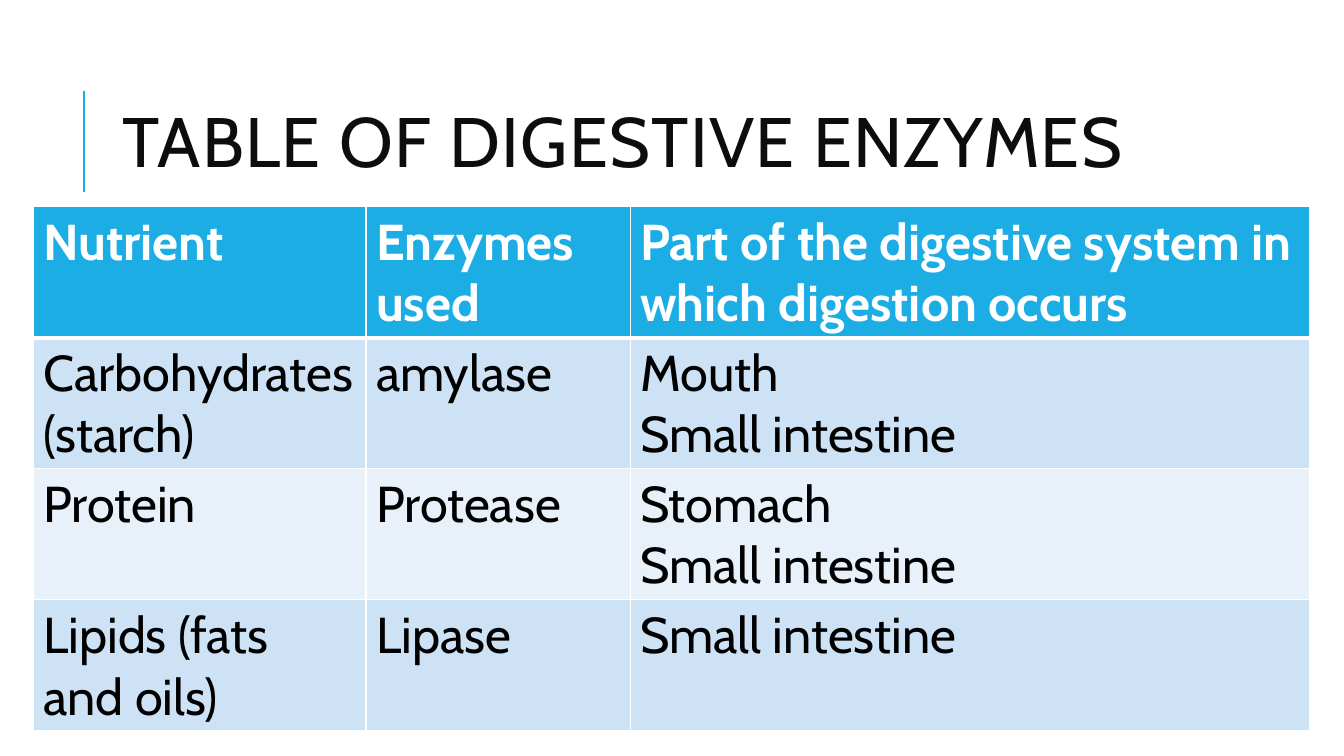
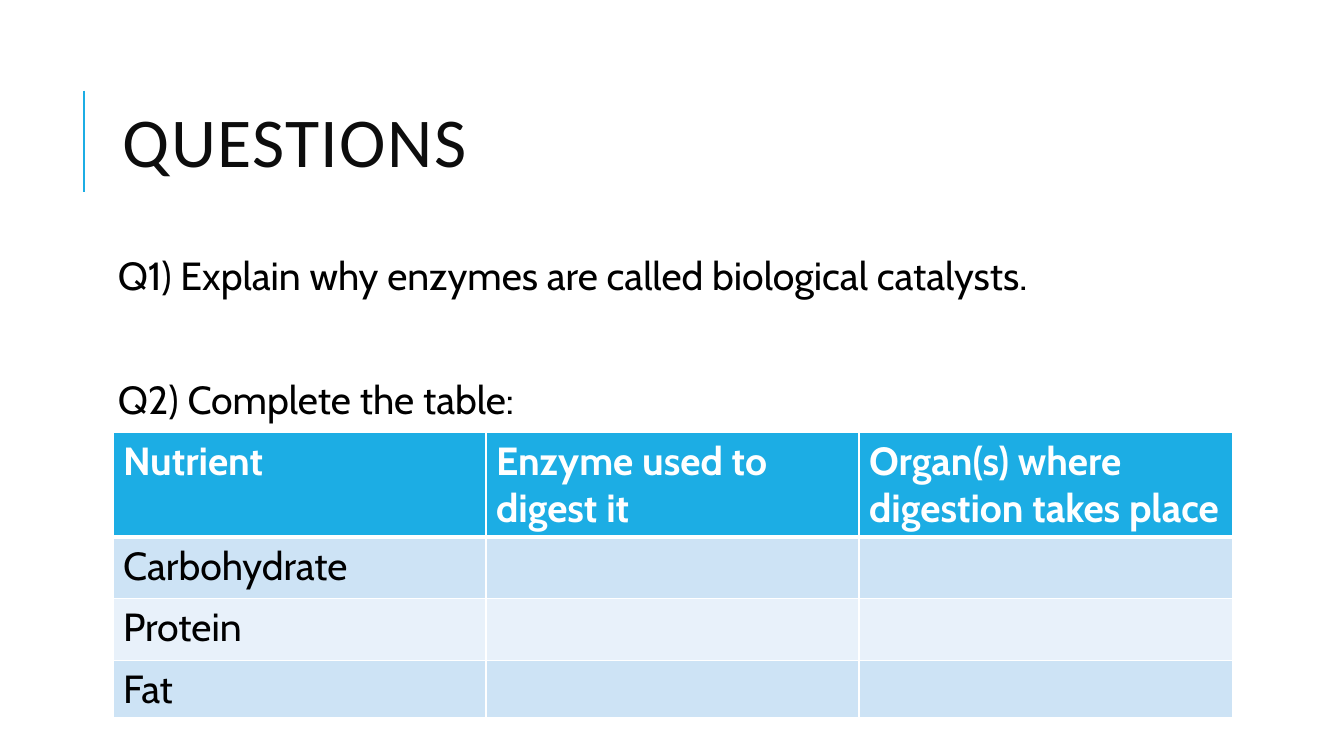
from lxml import etree
from pptx import Presentation
from pptx import util as u
from pptx.dml.color import RGBColor
from pptx.enum import shapes, text
from pptx.oxml.ns import qn

BLUE = RGBColor(0x1C, 0xAD, 0xE4)
PALE = RGBColor(0xCD, 0xE3, 0xF5)
FAINT = RGBColor(0xE8, 0xF1, 0xFA)
WHITE = RGBColor(0xFF, 0xFF, 0xFF)
BLACK = RGBColor(0, 0, 0)
INK = RGBColor(0x0D, 0x0D, 0x0D)
FONT = "Cabin"


def style(part, size, color, font=FONT, bold=False):
    for run in part.runs:
        run.font.name = font
        run.font.size = u.Pt(size)
        run.font.bold = bold
        run.font.color.rgb = color


def add_box(slide, box, lines):
    frame = slide.shapes.add_textbox(*map(u.Inches, box)).text_frame
    frame.word_wrap = True
    frame.text = lines
    return frame


def add_title(slide, box, words, font):
    left, top, width, height = box
    bar = slide.shapes.add_connector(
        shapes.MSO_CONNECTOR.STRAIGHT,
        u.Inches(left - 0.29), u.Inches(top + 0.26),
        u.Inches(left - 0.29), u.Inches(top + 1.26))
    bar.line.color.rgb = BLUE
    bar.line.width = u.Pt(1.5)
    etree.SubElement(bar._element.spPr, qn("a:effectLst"))
    frame = add_box(slide, box, words)
    frame.vertical_anchor = text.MSO_ANCHOR.MIDDLE
    para = frame.paragraphs[0]
    para.line_spacing = 0.8
    style(para, 50, INK, font)
    for run in para.runs:
        run.font._element.set("spc", "100")


def add_body(slide, box, lines, gap):
    frame = add_box(slide, box, "\n".join(lines))
    frame.margin_left = frame.margin_right = u.Inches(0.05)
    frame.margin_top = frame.margin_bottom = u.Inches(0.05)
    for num, para in enumerate(frame.paragraphs):
        para.line_spacing = 0.9
        para.space_before = u.Pt(gap if num else 0)
        para.space_after = u.Pt(2)
        style(para, 28, BLACK)


def add_edges(cell, top, bottom):
    props = cell._tc.get_or_add_tcPr()
    for side, width in (("L", 1), ("R", 1), ("T", top), ("B", bottom)):
        edge = etree.SubElement(props, qn("a:ln" + side), w=str(u.Pt(width)))
        fill = etree.SubElement(edge, qn("a:solidFill"))
        etree.SubElement(fill, qn("a:srgbClr"), val=str(WHITE))


def add_grid(slide, left, top, cols, heights, rows, size):
    grid = slide.shapes.add_table(
        len(rows), len(cols), u.Inches(left), u.Inches(top),
        u.Inches(sum(cols)), u.Inches(sum(heights))).table
    for col, width in zip(grid.columns, cols):
        col.width = u.Inches(width)
    for r, (row, height) in enumerate(zip(rows, heights)):
        grid.rows[r].height = u.Inches(height)
        for c, words in enumerate(row):
            cell = grid.cell(r, c)
            add_edges(cell, 3 if r == 1 else 1, 3 if r == 0 else 1)
            cell.fill.solid()
            cell.fill.fore_color.rgb = (
                BLUE if r == 0 else PALE if r % 2 else FAINT)
            if words:
                cell.text_frame.text = words
            for para in cell.text_frame.paragraphs:
                style(para, size, BLACK if r else WHITE, bold=r == 0)


def add_page(deck, title, font=FONT):
    slide = deck.slides.add_slide(deck.slide_layouts[6])
    add_title(slide, (1.12, 0.64, 10.63, 1.64), title, font)
    return slide


def main():
    deck = Presentation()
    deck.slide_width = u.Inches(13.33)
    deck.slide_height = u.Inches(7.5)

    slide = add_page(deck, "TABLE OF DIGESTIVE ENZYMES")
    add_grid(slide, 0.33, 2.05, (3.3, 2.62, 6.74), [1.3] * 4, (
        ("Nutrient", "Enzymes used",
         "Part of the digestive system in which digestion occurs"),
        ("Carbohydrates (starch)", "amylase", "Mouth\nSmall intestine"),
        ("Protein", "Protease", "Stomach\nSmall intestine"),
        ("Lipids (fats and oils)", "Lipase", "Small intestine"),
    ), 36)

    slide = add_page(deck, "QUESTIONS", "Calibri")
    add_body(slide, (1.12, 2.5, 10.63, 4.4), (
        "Q1) Explain why enzymes are called biological catalysts.",
        "Q2) Complete the table:"), 56)
    add_grid(slide, 1.12, 4.29, [3.7] * 3, (1.04, 0.61, 0.61, 0.57), (
        ("Nutrient", "Enzyme used to digest it",
         "Organ(s) where digestion takes place"),
        ("Carbohydrate", "", ""),
        ("Protein", "", ""),
        ("Fat", "", ""),
    ), 28)

    deck.save("out.pptx")


if __name__ == "__main__":
    main()
